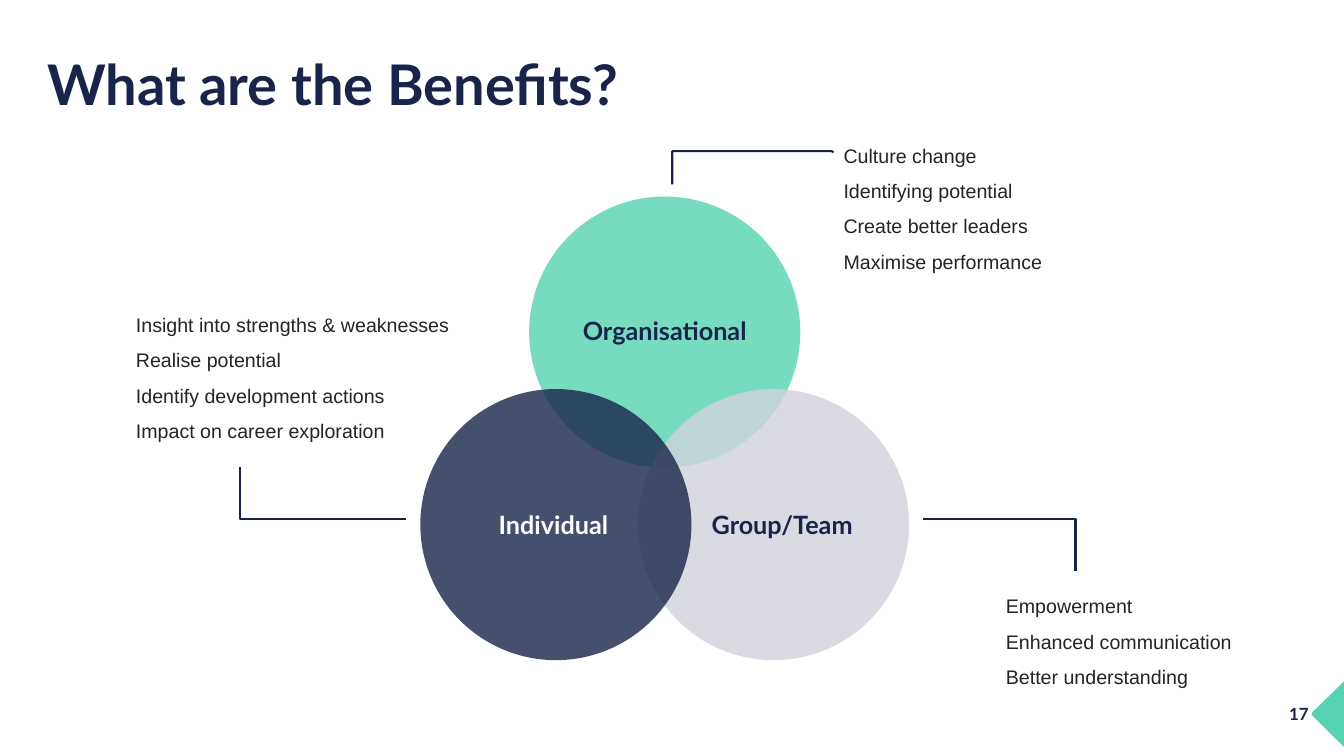
from dataclasses import dataclass

from lxml.etree import SubElement
from pptx import Presentation
from pptx.dml.color import RGBColor
from pptx.enum.shapes import MSO_SHAPE
from pptx.enum.text import MSO_ANCHOR, PP_ALIGN
from pptx.oxml.ns import qn
from pptx.util import Emu, Inches, Pt

NAVY = RGBColor(0x1A, 0x24, 0x4A)
GREEN = RGBColor(0x55, 0xD2, 0xB1)
GREY = RGBColor(0xD1, 0xD3, 0xDB)
WHITE = RGBColor(0xFF, 0xFF, 0xFF)
INK = RGBColor(0x24, 0x24, 0x24)

# Grid of 160 columns by 90 rows; every cell is a square
COLS, ROWS = 160, 90
CELL = Inches(13.333) / COLS
DIAMETER = 32.28
LABEL_H = 4.8

Point = tuple[float, float]


@dataclass
class Circle:
    label: str
    col: float
    row: float
    fill: RGBColor
    color: RGBColor
    label_mid: float
    label_row: float


@dataclass
class Benefits:
    lines: list[str]
    col: float
    row: float
    width: float
    height: float
    callout: list[Point]


CIRCLES = [
    Circle("Organisational", 63, 23.4, GREEN, NAVY, 79.14, 36.96),
    Circle("Group/Team", 75.96, 46.32, GREY, NAVY, 93.12, 60),
    Circle("Individual", 50.04, 46.32, NAVY, WHITE, 65.88, 60),
]

BENEFITS = [
    Benefits(["Culture change", "Identifying potential",
              "Create better leaders", "Maximise performance"],
             99.24, 15.12, 38.64, 17.64,
             [(80.04, 21.96), (80.04, 18), (99, 18), (99.24, 18.12)]),
    Benefits(["Insight into strengths & weaknesses", "Realise potential",
              "Identify development actions", "Impact on career exploration"],
             15, 35.28, 40.32, 17.64,
             [(48.36, 61.8), (28.56, 61.8), (28.56, 55.56)]),
    Benefits(["Empowerment", "Enhanced communication", "Better understanding"],
             118.56, 68.76, 38.64, 13.44,
             [(109.92, 61.8), (128.04, 61.8), (128.04, 67.92)]),
]

CORNER = [(160, 88.92), (156.24, 85.2), (156.14, 84.96), (156.24, 84.8), (160, 81.12)]


def grid(cells: float) -> Emu:
    return Emu(round(cells * CELL))


def add_text(s, lines: list[str], col: float, row: float, width: float, height: float,
             size: float, color: RGBColor, font: str = "Lato", bold: bool = True,
             align: PP_ALIGN = PP_ALIGN.LEFT, spacing: float = 1.0,
             anchor: MSO_ANCHOR = MSO_ANCHOR.TOP) -> None:
    tf = s.shapes.add_textbox(grid(col), grid(row), grid(width), grid(height)).text_frame
    tf.word_wrap = True
    tf.vertical_anchor = anchor
    tf.text = "\n".join(lines)
    for p in tf.paragraphs:
        p.alignment = align
        p.line_spacing = spacing
        for r in p.runs:
            r.font.name = font
            r.font.size = Pt(size)
            r.font.bold = bold
            r.font.color.rgb = color


def add_outline(s, points: list[Point], close: bool):
    corners = [(grid(x), grid(y)) for x, y in points]
    builder = s.shapes.build_freeform(*corners[0], scale=1.0)
    builder.add_line_segments(corners[1:], close=close)
    sp = builder.convert_to_shape()
    sp.shadow.inherit = False
    return sp


def add_callout(s, points: list[Point]) -> None:
    sp = add_outline(s, points, close=False)
    sp.fill.background()
    sp.line.color.rgb = NAVY
    sp.line.width = Pt(1.5)


def add_circle(s, circle: Circle) -> None:
    sp = s.shapes.add_shape(MSO_SHAPE.OVAL, grid(circle.col), grid(circle.row),
                            grid(DIAMETER), grid(DIAMETER))
    sp.shadow.inherit = False
    sp.line.fill.background()
    sp.fill.solid()
    sp.fill.fore_color.rgb = circle.fill
    # 80 % opacity lets the overlaps show
    color = sp.fill._xPr.find(qn("a:solidFill"))[0]
    SubElement(color, qn("a:alpha")).set("val", "80000")


def main() -> None:
    prs = Presentation()
    prs.slide_width, prs.slide_height = grid(COLS), grid(ROWS)
    s = prs.slides.add_slide(prs.slide_layouts[6])

    # Corner marker and page number
    marker = add_outline(s, CORNER, close=True)
    marker.fill.solid()
    marker.fill.fore_color.rgb = GREEN
    marker.line.fill.background()
    add_text(s, ["17"], 148.56, 83.16, 8.4, 3.6, 12, NAVY, align=PP_ALIGN.RIGHT)

    # Title
    add_text(s, ["What are the Benefits?"], 4.44, 5.64, 138, 9.48, 40, NAVY,
             spacing=0.9, anchor=MSO_ANCHOR.MIDDLE)

    # Overlapping circles, then their labels on top
    for circle in CIRCLES:
        add_circle(s, circle)
    for circle in CIRCLES:
        add_text(s, [circle.label], circle.label_mid - DIAMETER / 2, circle.label_row,
                 DIAMETER, LABEL_H, 18, circle.color, align=PP_ALIGN.CENTER)

    # Benefit lists with their callout lines
    for b in BENEFITS:
        add_callout(s, b.callout)
        add_text(s, b.lines, b.col, b.row, b.width, b.height, 14, INK,
                 font="Arial", bold=False, spacing=1.5)

    prs.save("out.pptx")


if __name__ == "__main__":
    main()
